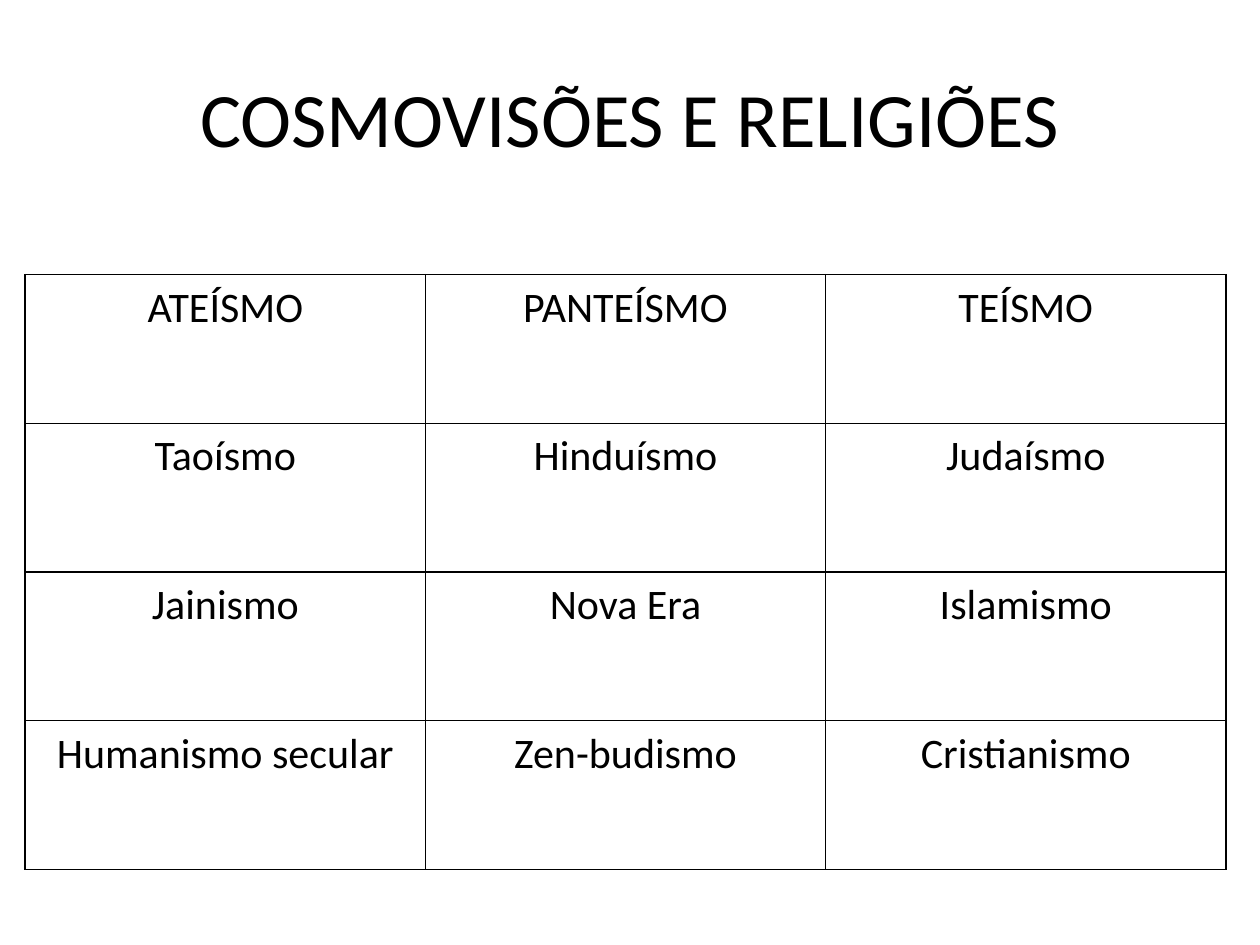
"""Build a slide that sorts religions under three worldviews."""
from dataclasses import dataclass

from lxml.etree import SubElement as Sub
from pptx import Presentation
from pptx.dml.color import RGBColor as Color
from pptx.enum.text import MSO_ANCHOR as Anchor, PP_ALIGN as Align
from pptx.oxml.ns import qn
from pptx.slide import Slide
from pptx.table import _Cell as Cell
from pptx.text.text import _Paragraph as Para
from pptx.util import Inches, Pt


@dataclass(frozen=True)
class Theme:
    font: str = "Calibri"
    ink: str = "000000"
    paper: str = "FFFFFF"
    head: int = 44
    body: int = 24
    rule: int = 1


@dataclass(frozen=True)
class View:
    name: str
    faiths: tuple[str, ...]


THEME = Theme()
VIEWS = (
    View("ATEÍSMO", ("Taoísmo", "Jainismo", "Humanismo secular")),
    View("PANTEÍSMO", ("Hinduísmo", "Nova Era", "Zen-budismo")),
    View("TEÍSMO", ("Judaísmo", "Islamismo", "Cristianismo")),
)


def style(para: Para, size: int) -> None:
    para.alignment = Align.CENTER
    para.font.name = THEME.font
    para.font.size = Pt(size)
    para.font.color.rgb = Color.from_string(THEME.ink)


def border(cell: Cell) -> None:
    props = cell._tc.get_or_add_tcPr()
    for side in "LRTB":
        line = Sub(props, qn(f"a:ln{side}"), w=str(Pt(THEME.rule)))
        fill = Sub(line, qn("a:solidFill"))
        Sub(fill, qn("a:srgbClr"), val=THEME.ink)


def write(cell: Cell, text: str) -> None:
    cell.text = text
    cell.margin_left = cell.margin_right = Inches(0.07)
    cell.margin_top = cell.margin_bottom = 0
    border(cell)
    cell.fill.background()
    para = cell.text_frame.paragraphs[0]
    para.line_spacing = 1.15
    style(para, THEME.body)


def add_title(slide: Slide, text: str) -> None:
    title = slide.shapes.title
    title.left, title.top = Inches(0.5), Inches(0.3)
    title.width, title.height = Inches(9), Inches(1.25)
    title.text_frame.text = text
    title.text_frame.vertical_anchor = Anchor.MIDDLE
    style(title.text_frame.paragraphs[0], THEME.head)


def add_grid(slide: Slide, views: tuple[View, ...]) -> None:
    rows = 1 + len(views[0].faiths)
    frame = slide.shapes.add_table(
        rows, len(views), Inches(0.2), Inches(2.18), Inches(9.53), Inches(4.72))
    table = frame.table
    table.horz_banding = False
    table.first_row = False
    for col, view in enumerate(views):
        for row, text in enumerate((view.name, *view.faiths)):
            write(table.cell(row, col), text)


def main() -> None:
    deck = Presentation()
    deck.slide_width, deck.slide_height = Inches(10), Inches(7.5)
    slide = deck.slides.add_slide(deck.slide_layouts[5])
    slide.background.fill.solid()
    slide.background.fill.fore_color.rgb = Color.from_string(THEME.paper)
    add_title(slide, "COSMOVISÕES E RELIGIÕES")
    add_grid(slide, VIEWS)
    deck.save("out.pptx")


if __name__ == "__main__":
    main()
